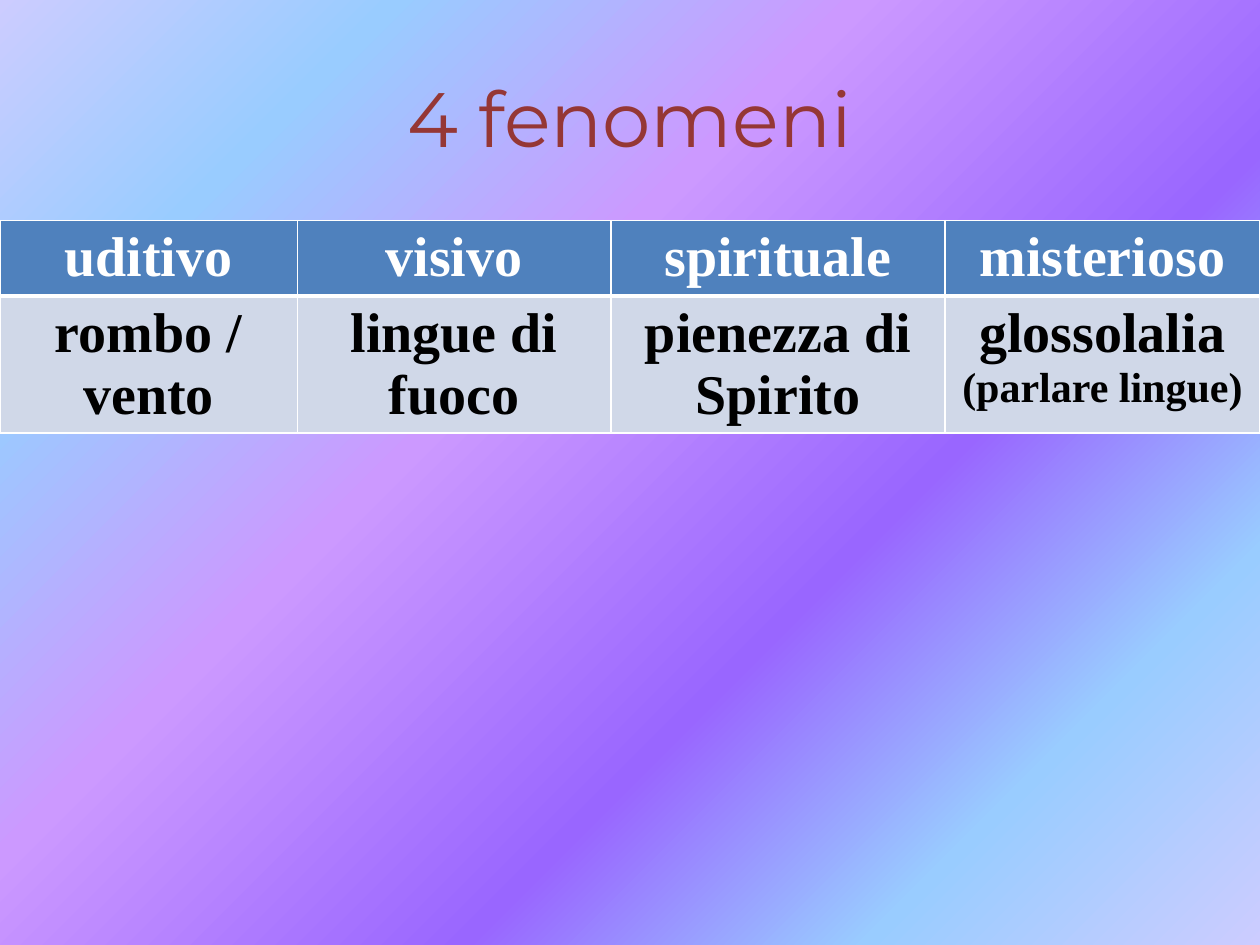
"""Build the slide on the four phenomena, with its title and table."""
from lxml.etree import SubElement
from pptx import Presentation
from pptx.dml.color import RGBColor
from pptx.enum.text import MSO_ANCHOR as Anchor, PP_ALIGN as Align
from pptx.oxml.ns import qn
from pptx.util import Inches, Pt

WHITE = RGBColor(0xFF, 0xFF, 0xFF)
BLACK = RGBColor(0x00, 0x00, 0x00)
MAROON = RGBColor(0x95, 0x37, 0x35)
BLUE = RGBColor(0x4F, 0x81, 0xBD)
PALE = RGBColor(0xD0, 0xD8, 0xE8)
LAVENDER = RGBColor(0xCC, 0xCC, 0xFF)
SKY = RGBColor(0x99, 0xCC, 0xFF)
ORCHID = RGBColor(0xCC, 0x99, 0xFF)
VIOLET = RGBColor(0x99, 0x66, 0xFF)

BACKDROP = [(0, LAVENDER), (18, SKY), (39, ORCHID), (64, VIOLET), (82, SKY), (100, LAVENDER)]
COLUMN_WIDTHS = [2.36, 2.49, 2.65, 2.5]
ROW_HEIGHTS = [0.6, 1.08]
SENSES = ["uditivo", "visivo", "spirituale", "misterioso"]
PHENOMENA = ["rombo / vento", "lingue di fuoco", "pienezza di Spirito",
             "glossolalia\n(parlare lingue)"]


class SlideBuilder:
    title_font = {"name": "Montserrat", "size": Pt(44), "bold": False}
    cell_font = {"name": "Times New Roman", "size": Pt(32), "bold": True}
    note_size = Pt(24)

    def __init__(self, slide):
        self.slide = slide

    def format_text(self, paragraph, style, color):
        paragraph.alignment = Align.CENTER
        for run in paragraph.runs:
            for attribute, value in style.items():
                setattr(run.font, attribute, value)
            run.font.color.rgb = color

    def backdrop(self, stops):
        fill = self.slide.background.fill
        fill.gradient()
        fill.gradient_angle = 315
        stop_list = self.slide.element.find(".//" + qn("a:gsLst"))
        stop_list.clear()
        for percent, color in stops:
            stop = SubElement(stop_list, qn("a:gs"), pos=str(percent * 1000))
            SubElement(stop, qn("a:srgbClr"), val=str(color))

    def title(self, wording, left, top, width, height):
        heading = self.slide.shapes.title
        box = {"left": left, "top": top, "width": width, "height": height}
        for attribute, value in box.items():
            setattr(heading, attribute, Inches(value))
        heading.text_frame.text = wording
        heading.text_frame.vertical_anchor = Anchor.MIDDLE
        self.format_text(heading.text_frame.paragraphs[0], self.title_font, MAROON)

    def borders(self, cell, widths):
        properties = cell._tc.get_or_add_tcPr()
        for index, (side, points) in enumerate(widths.items()):
            line = SubElement(properties, qn(f"a:ln{side}"), w=str(Pt(points)))
            solid = SubElement(line, qn("a:solidFill"))
            SubElement(solid, qn("a:srgbClr"), val=str(WHITE))
            properties.insert(index, line)

    def cell(self, cell, wording, fill, color, widths):
        cell.text = wording
        first, *notes = cell.text_frame.paragraphs
        self.format_text(first, self.cell_font, color)
        for note in notes:
            self.format_text(note, self.cell_font | {"size": self.note_size}, color)
        cell.fill.solid()
        cell.fill.fore_color.rgb = fill
        self.borders(cell, widths)

    def table(self, left, top):
        grid = self.slide.shapes.add_table(
            len(ROW_HEIGHTS), len(COLUMN_WIDTHS), Inches(left), Inches(top),
            Inches(sum(COLUMN_WIDTHS)), Inches(sum(ROW_HEIGHTS))).table
        grid.horz_banding = False
        for column, width in zip(grid.columns, COLUMN_WIDTHS):
            column.width = Inches(width)
        for row, height in zip(grid.rows, ROW_HEIGHTS):
            row.height = Inches(height)
        thin = {"L": 1, "R": 1, "T": 1, "B": 1}
        looks = [(SENSES, BLUE, WHITE, thin | {"B": 3}),
                 (PHENOMENA, PALE, BLACK, thin | {"T": 3})]
        for row, (wordings, fill, color, widths) in zip(grid.rows, looks):
            for cell, wording in zip(row.cells, wordings):
                self.cell(cell, wording, fill, color, widths)


def main():
    deck = Presentation()
    deck.slide_width, deck.slide_height = Inches(10), Inches(7.5)
    builder = SlideBuilder(deck.slides.add_slide(deck.slide_layouts[5]))
    builder.backdrop(BACKDROP)
    builder.title("4 fenomeni", 0.5, 0.3, 9, 1.25)
    builder.table(0, 1.75)
    deck.save("out.pptx")


if __name__ == "__main__":
    main()
